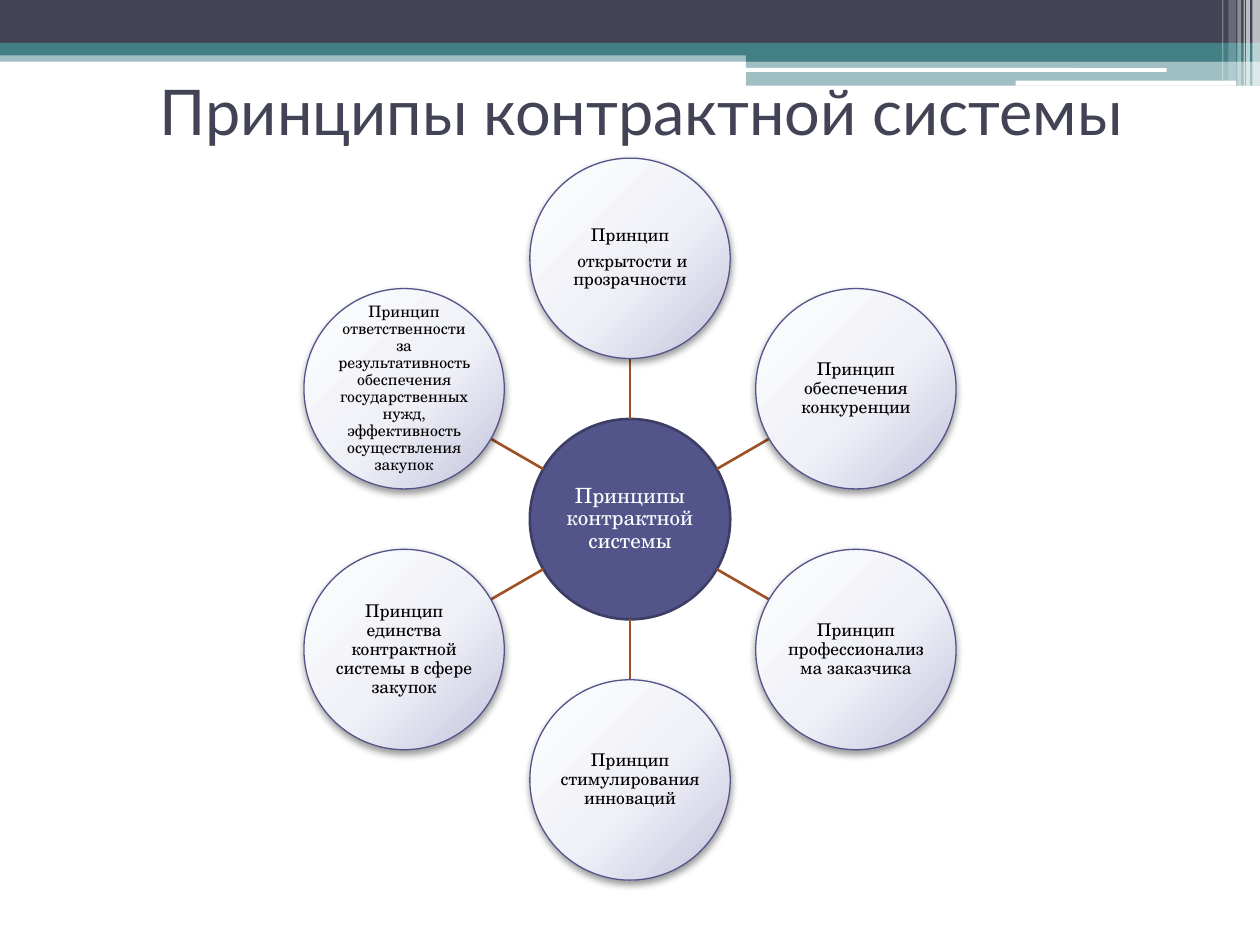
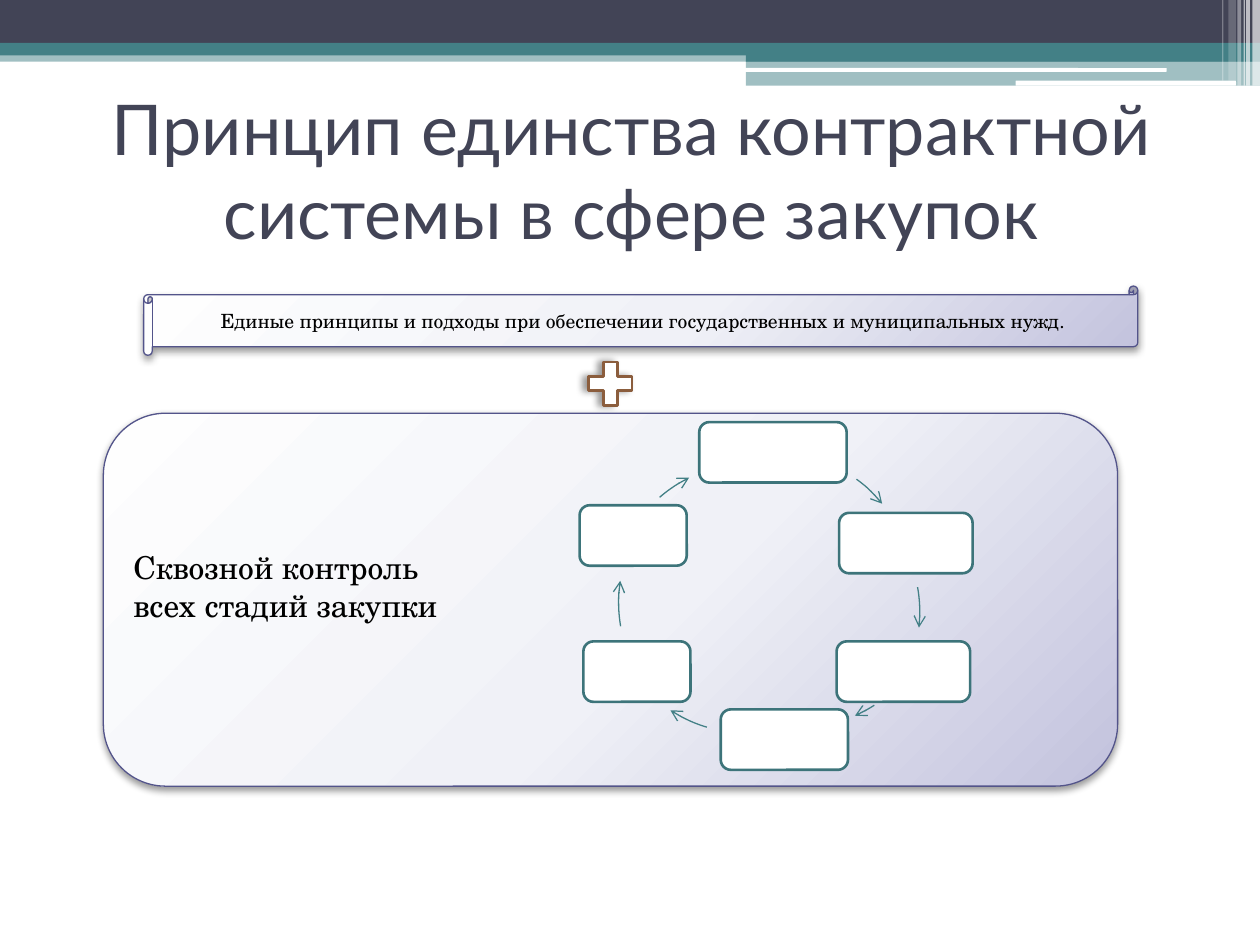
"""Builds two slides on the principles of the contract system."""
import math

import lxml.etree
import pptx
import pptx.dml.color
import pptx.enum.dml
import pptx.enum.shapes
import pptx.enum.text
import pptx.oxml
import pptx.oxml.ns
import pptx.util

Inches = pptx.util.Inches
Pt = pptx.util.Pt
SHAPE = pptx.enum.shapes.MSO_SHAPE
ALIGN = pptx.enum.text.PP_ALIGN
ANCHOR = pptx.enum.text.MSO_ANCHOR
qn = pptx.oxml.ns.qn

COLORS = {
    "ink": "424456", "teal": "438086", "teal_edge": "3D747A", "white": "FFFFFF",
    "black": "000000", "violet": "53548A", "violet_edge": "3D3E66",
    "spoke": "9D5124", "plus_edge": "8B5D3D",
}
GLOSS = [(0, "FEFEFE"), (55, "F0F1F7"), (100, "C2C2DD")]
SOFT_SHADOW = {"blur": 4.1, "distance": 2, "direction": 90}
SIDE_SHADOW = {"blur": 4, "distance": 3, "direction": 180}
TITLE_FONT, BODY_FONT = "Lato", "TeX Gyre Schola"

BANDS = [
    (0, 0.4, 10, 0.09, "teal", 50),
    (0, 0, 10, 0.34, "ink", 100),
    (0, 0.34, 10, 0.1, "teal", 100),
    (5.92, 0.39, 4.08, 0.1, "teal", 100),
    (5.92, 0.48, 4.08, 0.2, "teal", 50),
    (5.91, 0.54, 3.35, 0.03, "white", 100),
    (8.06, 0.64, 1.75, 0.04, "white", 100),
    (9.94, 0, 0.06, 0.68, "white", 65),
    (9.89, 0, 0.03, 0.68, "white", 65),
    (9.87, 0, 0.01, 0.68, "white", 60),
    (9.82, 0, 0.03, 0.68, "white", 40),
    (9.75, 0, 0.06, 0.64, "white", 20),
    (9.7, 0, 0.01, 0.64, "white", 30),
]

PRINCIPLES = [
    (["Принцип", " открытости и прозрачности"], 10),
    (["Принцип обеспечения конкуренции"], 10),
    (["Принцип профессионализма заказчика"], 10),
    (["Принцип стимулирования инноваций"], 10),
    (["Принцип единства контрактной системы в сфере закупок"], 10),
    (["Принцип ответственности за результативность обеспечения государственных "
      "нужд, эффективность осуществления закупок"], 9),
]

STAGES = [
    (5.55, 3.35, 1.17), (6.66, 4.07, 1.06), (6.64, 5.09, 1.06),
    (5.72, 5.63, 1.01), (4.63, 5.09, 0.85), (4.6, 4.01, 0.85),
]
CYCLE_ARROWS = [
    (4.98, 3.58, -53.5, -39.3), (5.02, 3.72, -10.1, 6.1), (5.18, 3.5, 57.1, 65.9),
    (4.8, 3.54, 106.8, 122.9), (4.91, 3.64, 170.4, 188.6), (4.84, 3.67, 229.2, 243.4),
]


def rgb(name):
    return pptx.dml.color.RGBColor.from_string(COLORS[name])


def set_format(target, values):
    for name, value in values.items():
        setattr(target, name, value)


class Deck:
    def __init__(self):
        self.presentation = pptx.Presentation()
        set_format(self.presentation, {"slide_width": Inches(10), "slide_height": Inches(7.5)})
        self.slide = None

    def start(self, title, left, top, size):
        self.slide = self.presentation.slides.add_slide(self.presentation.slide_layouts[5])
        heading = self.slide.shapes.title
        set_format(heading, {"left": Inches(left), "top": Inches(top),
                             "width": Inches(9), "height": Inches(1.17)})
        self.set_text(heading, [title], size, "ink", font=TITLE_FONT)

    def bands(self):
        master_tree = self.presentation.slide_master.shapes.element
        for index, (left, top, width, height, color, opacity) in enumerate(BANDS):
            rounded = color == "white" and width > 1
            kind = SHAPE.ROUNDED_RECTANGLE if rounded else SHAPE.RECTANGLE
            band = self.shape(kind, left, top, width, height, color)
            if opacity < 100:
                tint = band.element.spPr.find(".//" + qn("a:srgbClr"))
                lxml.etree.SubElement(tint, qn("a:alpha"), val=str(opacity * 1000))
            band.element.nvSpPr.cNvPr.id = 100 + index
            master_tree.insert(2 + index, band.element)

    def shape(self, kind, left, top, width, height, fill=None, line=None, weight=0.75, shadow=None):
        shape = self.slide.shapes.add_shape(
            kind, Inches(left), Inches(top), Inches(width), Inches(height))
        if fill in COLORS:
            shape.fill.solid()
            shape.fill.fore_color.rgb = rgb(fill)
        else:
            shape.fill.background()
        if fill == "gloss":
            self.gloss(shape)
        if line:
            shape.line.color.rgb = rgb(line)
            shape.line.width = Pt(weight)
        else:
            shape.line.fill.background()
        shape.shadow.inherit = False
        if shadow:
            self.cast(shape, **shadow)
        return shape

    def gloss(self, shape):
        stops = "".join(f'<a:gs pos="{pos * 1000}"><a:srgbClr val="{color}"/></a:gs>'
                        for pos, color in GLOSS)
        gradient = pptx.oxml.parse_xml(
            f'<a:gradFill {pptx.oxml.ns.nsdecls("a")} rotWithShape="1"><a:gsLst>{stops}</a:gsLst>'
            '<a:path path="circle"><a:fillToRect l="-40000" t="-90000" r="140000" b="190000"/>'
            '</a:path></a:gradFill>')
        properties = shape.element.spPr
        properties.replace(properties.find(qn("a:noFill")), gradient)

    def cast(self, shape, blur, distance, direction):
        effects = shape.element.spPr.find(qn("a:effectLst"))
        outer = lxml.etree.SubElement(
            effects, qn("a:outerShdw"), blurRad=str(Pt(blur)), dist=str(Pt(distance)),
            dir=str(direction * 60000), rotWithShape="0")
        color = lxml.etree.SubElement(outer, qn("a:srgbClr"), val=COLORS["black"])
        lxml.etree.SubElement(color, qn("a:alpha"), val="40000")

    def set_text(self, shape, lines, size, color="black", font=BODY_FONT, align=ALIGN.CENTER,
                 anchor=ANCHOR.MIDDLE, inset=None, spacing=None, after=None):
        frame = shape.text_frame
        set_format(frame, {"word_wrap": True, "vertical_anchor": anchor})
        if inset is not None:
            sides = ("left", "top", "right", "bottom")
            set_format(frame, {f"margin_{side}": Inches(inset) for side in sides})
        for index, line in enumerate(lines):
            paragraph = frame.add_paragraph() if index else frame.paragraphs[0]
            set_format(paragraph, {"alignment": align, "line_spacing": spacing})
            if after and index < len(lines) - 1:
                paragraph.space_after = Pt(after)
            run = paragraph.add_run()
            run.text = line
            set_format(run.font, {"name": font, "size": Pt(size)})
            run.font.color.rgb = rgb(color)

    def label(self, lines, left, top, width, height, size):
        box = self.slide.shapes.add_textbox(
            Inches(left), Inches(top), Inches(width), Inches(height))
        self.set_text(box, lines, size, align=ALIGN.LEFT, anchor=ANCHOR.TOP)

    def connector(self, x1, y1, x2, y2, color):
        connector = self.slide.shapes.add_connector(
            pptx.enum.shapes.MSO_CONNECTOR.STRAIGHT,
            Inches(x1), Inches(y1), Inches(x2), Inches(y2))
        connector.line.color.rgb = rgb(color)
        connector.line.width = Pt(1.5)
        lxml.etree.SubElement(connector.element.spPr, qn("a:effectLst"))

    def arc_arrow(self, left, top, diameter, start, end):
        arc = self.shape(SHAPE.ARC, left, top, diameter, diameter, line="teal")
        for index, angle in enumerate((start, end)):
            arc.adjustments[index] = angle % 360 * 0.6
        outline = arc.element.spPr.find(qn("a:ln"))
        lxml.etree.SubElement(outline, qn("a:tailEnd"), type="arrow")


def principles_wheel(deck):
    center_x, center_y, radius, orbit = 5, 4.12, 0.795, 2.07
    circle_text = {"inset": 0.01, "spacing": 0.9, "after": 3.5}

    def circle(x, y, *style, **extra):
        return deck.shape(SHAPE.OVAL, x - radius, y - radius, 2 * radius, 2 * radius,
                          *style, **extra)

    hub = circle(center_x, center_y, "violet", "violet_edge", 1.5)
    deck.set_text(hub, ["Принципы контрактной системы"], 12, "white", **circle_text)
    for index, (lines, size) in enumerate(PRINCIPLES):
        angle = math.radians(60 * index - 90)
        inner, outer, middle = [
            (center_x + reach * math.cos(angle), center_y + reach * math.sin(angle))
            for reach in (radius, orbit - radius, orbit)]
        deck.connector(*inner, *outer, "spoke")
        principle = circle(*middle, "gloss", "violet", shadow=SOFT_SHADOW)
        deck.set_text(principle, lines, size, **circle_text)


def unity_principle(deck):
    deck.shape(SHAPE.ROUNDED_RECTANGLE, 0.82, 3.28, 8.05, 2.96, "gloss", "violet",
               shadow=SOFT_SHADOW)
    scroll = deck.shape(SHAPE.HORIZONTAL_SCROLL, 1.14, 2.27, 7.89, 0.55, "gloss", "violet",
                        shadow=SOFT_SHADOW)
    deck.set_text(scroll, ["Единые принципы и подходы при обеспечении государственных "
                           "и муниципальных нужд."], 11.2)
    deck.shape(SHAPE.MATH_PLUS, 4.61, 2.81, 0.47, 0.47, "white", "plus_edge", 1.5, SIDE_SHADOW)
    deck.label(["Сквозной контроль", "всех стадий закупки"], 0.96, 4.3, 2.81, 0.71, 18)
    for (left, top, width), (arc_left, arc_top, start, end) in zip(STAGES, CYCLE_ARROWS):
        deck.shape(SHAPE.ROUNDED_RECTANGLE, left, top, width, 0.48, "white", "teal_edge", 1.5)
        deck.arc_arrow(arc_left, arc_top, 2.28, start, end)


def main():
    deck = Deck()
    deck.start("Принципы контрактной системы", 0.59, 0.29, 36)
    deck.bands()
    principles_wheel(deck)
    deck.start("Принцип единства контрактной системы в сфере закупок", 0.51, 0.76, 40)
    unity_principle(deck)
    deck.presentation.save("out.pptx")


if __name__ == "__main__":
    main()
